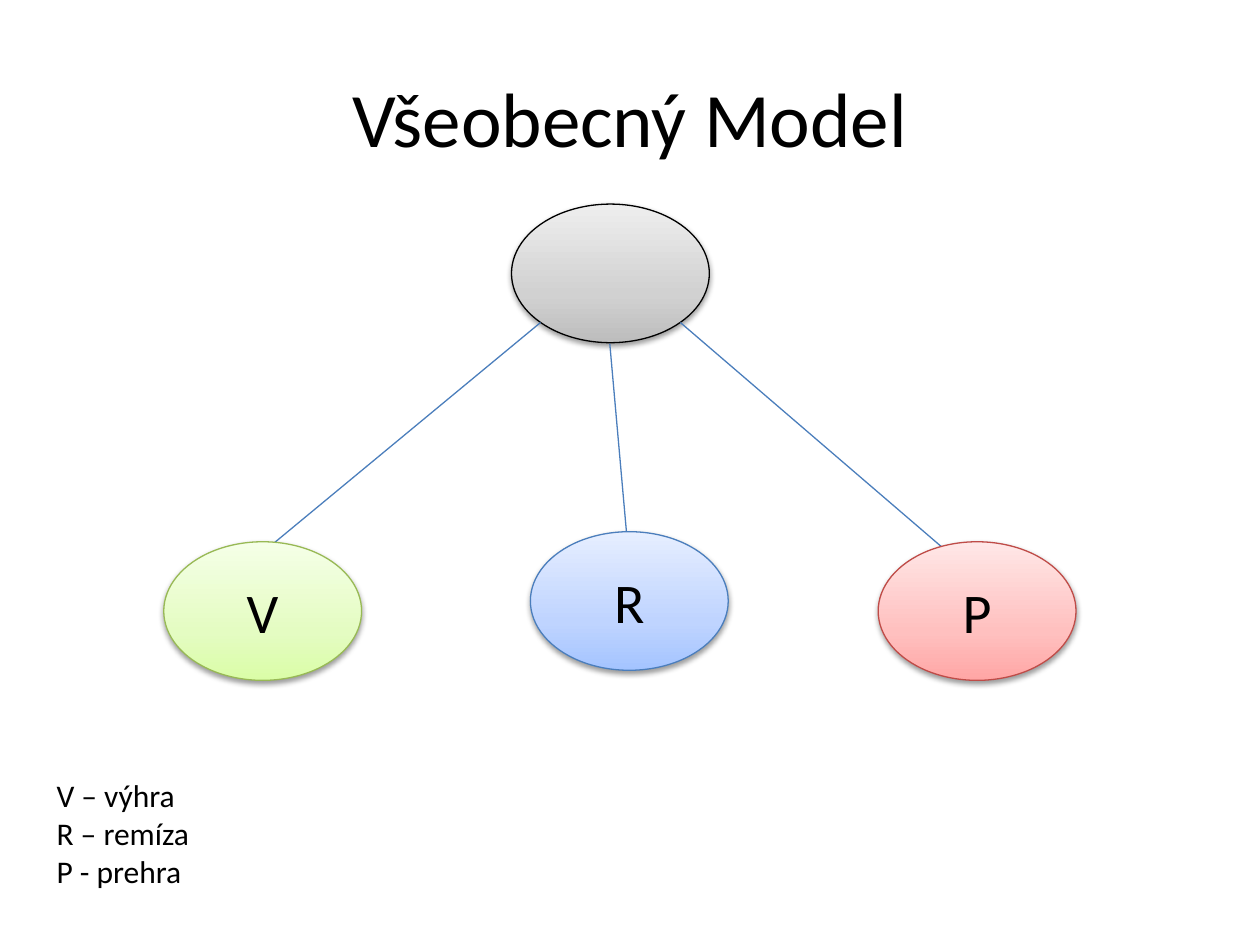
import pptx
import pptx.util
import pptx.dml.color
import pptx.enum.shapes
import pptx.enum.text
import pptx.oxml
import pptx.oxml.ns
from lxml import etree

Inches, Pt = pptx.util.Inches, pptx.util.Pt
RGB = pptx.dml.color.RGBColor.from_string
ALIGN, ANCHOR = pptx.enum.text.PP_ALIGN, pptx.enum.text.MSO_ANCHOR
qn = pptx.oxml.ns.qn

# Content
TITLE = "Všeobecný Model"
LEGEND = ["V – výhra", "R – remíza", "P - prehra"]
ROOT = ("", 4.06, 1.62, "neutral")
OUTCOMES = [("V", 1.3, 4.3, "win"), ("R", 4.21, 4.22, "draw"), ("P", 6.97, 4.3, "loss")]
BRANCHES = [(4.29, 2.56, 2.09, 4.38), (5.4, 2.56, 7.52, 4.38), (4.84, 2.73, 5, 4.54)]

# Style
FONT = "Calibri"
NODE_SIZE = (1.57, 1.1)
COLORS = {"text": "000000", "shadow": "000000", "branch": "4B7EBC"}
OUTLINES = {"neutral": "000000", "win": "98B955", "draw": "4B7EBC", "loss": "BF4C48"}
GRADIENTS = {
    "neutral": ("BDBDBD", "D1D1D1", "EEEEEE"),
    "win": ("DAFDA7", "E4FCC2", "F5FFE7"),
    "draw": ("A4C4FF", "BFD4FF", "E6EEFF"),
    "loss": ("FFA6A5", "FFC0BF", "FFE7E7"),
}
STOPS = (0, 35, 100)


def write(frame, lines, size, align, anchor):
    frame.word_wrap = True
    frame.vertical_anchor = anchor
    frame.text = "\n".join(lines)
    for para in frame.paragraphs:
        para.alignment = align
        for span in para.runs:
            span.font.name = FONT
            span.font.size = Pt(size)
            span.font.color.rgb = RGB(COLORS["text"])


def add_text(page, place, lines, size, align, anchor):
    box = page.shapes.add_textbox(*map(Inches, place))
    write(box.text_frame, lines, size, align, anchor)
    return box


def add_color(parent, color):
    return etree.SubElement(parent, qn("a:srgbClr"), val=color)


def set_gradient(shape, colors):
    shape.fill.gradient()
    shape.fill.gradient_angle = 90
    stops = shape._element.spPr.find(".//" + qn("a:gsLst"))
    for stop in list(stops):
        stops.remove(stop)
    for position, color in zip(STOPS, colors):
        add_color(etree.SubElement(stops, qn("a:gs"), pos=str(position * 1000)), color)


def set_shadow(shape):
    shape.shadow.inherit = False
    effects = shape._element.spPr.find(qn("a:effectLst"))
    shadow = etree.SubElement(
        effects, qn("a:outerShdw"), blurRad=str(Pt(3.1)), dist=str(Pt(1.6)),
        dir="5400000", rotWithShape="0")
    etree.SubElement(add_color(shadow, COLORS["shadow"]), qn("a:alpha"), val="38000")


def add_node(page, label, left, top, kind):
    node = page.shapes.add_shape(
        pptx.enum.shapes.MSO_SHAPE.OVAL, *map(Inches, (left, top, *NODE_SIZE)))
    set_gradient(node, GRADIENTS[kind])
    node.line.color.rgb = RGB(OUTLINES[kind])
    node.line.width = Pt(0.75)
    set_shadow(node)
    if label:
        write(node.text_frame, [label], 32, ALIGN.CENTER, ANCHOR.MIDDLE)


def add_branch(page, ends):
    branch = page.shapes.add_connector(
        pptx.enum.shapes.MSO_CONNECTOR.STRAIGHT, *map(Inches, ends))
    branch.line.color.rgb = RGB(COLORS["branch"])
    branch.line.width = Pt(0.75)
    etree.SubElement(branch._element.spPr, qn("a:effectLst"))


def main():
    deck = pptx.Presentation()
    deck.slide_width, deck.slide_height = Inches(10), Inches(7.5)
    page = deck.slides.add_slide(deck.slide_layouts[6])

    # Title
    add_text(page, (0.5, 0.3, 9, 1.25), [TITLE], 44, ALIGN.CENTER, ANCHOR.MIDDLE)

    # Tree: the outcomes cover the lower ends of the branches
    add_node(page, *ROOT)
    for ends in BRANCHES:
        add_branch(page, ends)
    for outcome in OUTCOMES:
        add_node(page, *outcome)

    # Legend
    legend = add_text(page, (0.35, 6.11, 1.81, 1.01), LEGEND, 18, ALIGN.LEFT, ANCHOR.TOP)
    legend.text_frame.auto_size = pptx.enum.text.MSO_AUTO_SIZE.SHAPE_TO_FIT_TEXT

    deck.save("out.pptx")


if __name__ == "__main__":
    main()
